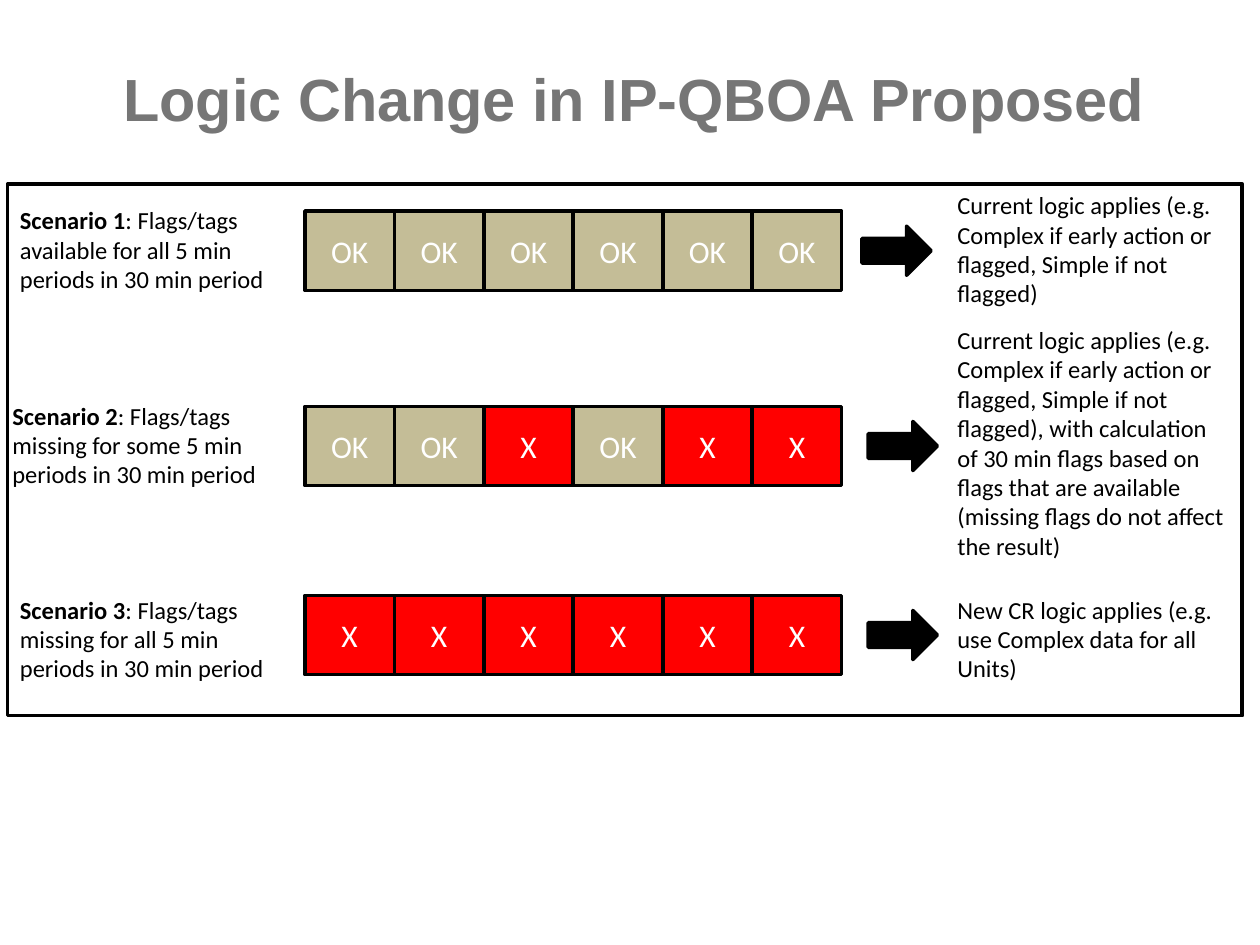
"""Build the slide comparing three flag-availability scenarios."""
from pptx import Presentation
from pptx.dml.color import RGBColor
from pptx.enum.shapes import MSO_SHAPE
from pptx.enum.text import MSO_ANCHOR, MSO_AUTO_SIZE, PP_ALIGN
from pptx.util import Inches, Pt

HEADING = "Logic Change in IP-QBOA Proposed"
SCENARIOS = [
    {"name": "Scenario 1",
     "condition": ": Flags/tags available for all 5 min periods in 30 min period",
     "flags": ["OK"] * 6,
     "outcome": "Current logic applies (e.g. Complex if early action or flagged, "
                "Simple if not flagged)",
     "outcome_lines": 4, "middle": 1.99, "text_middle": 1.99,
     "label_left": 0.06, "arrow_left": 6.84},
    {"name": "Scenario 2",
     "condition": ": Flags/tags missing for some 5 min periods in 30 min period",
     "flags": ["OK", "OK", "X", "OK", "X", "X"],
     "outcome": "Current logic applies (e.g. Complex if early action or flagged, "
                "Simple if not flagged), with calculation of 30 min flags based on "
                "flags that are available (missing flags do not affect the result)",
     "outcome_lines": 8, "middle": 3.54, "text_middle": 3.54,
     "label_left": 0, "arrow_left": 6.89},
    {"name": "Scenario 3",
     "condition": ": Flags/tags missing for all 5 min periods in 30 min period",
     "flags": ["X"] * 6,
     "outcome": "New CR logic applies (e.g. use Complex data for all Units)",
     "outcome_lines": 3, "middle": 5.04, "text_middle": 5.08,
     "label_left": 0.06, "arrow_left": 6.89},
]
COLORS = {"OK": "C4BD97", "X": "FF0000", "ink": "000000",
          "flag": "FFFFFF", "heading": "767676"}
FLAGS_LEFT, FLAG_PITCH, FLAG_WIDTH, FLAG_HEIGHT = 2.42, 0.71, 0.71, 0.63
ARROW_WIDTH, ARROW_HEIGHT = 0.55, 0.39
OUTCOME_LEFT, NOTE_WIDTH, LINE_HEIGHT, NOTE_PADDING = 7.5, 2.36, 0.24, 0.1
CONDITION_LINES = 3


def write(frame, *pieces, size=14, font="Calibri", color="ink",
          align=PP_ALIGN.LEFT, anchor=MSO_ANCHOR.TOP, wrap=True):
    """Fill a text frame with (text, bold) pieces."""
    frame.word_wrap = wrap
    frame.vertical_anchor = anchor
    paragraph = frame.paragraphs[0]
    paragraph.alignment = align
    for text, bold in pieces:
        run = paragraph.add_run()
        run.text = text
        run.font.name = font
        run.font.size = Pt(size)
        run.font.bold = bold
        run.font.color.rgb = RGBColor.from_string(COLORS[color])


def add_box(slide, preset, left, top, width, height, fill=None):
    """Add a black-outlined preset shape."""
    box = slide.shapes.add_shape(preset, Inches(left), Inches(top),
                                 Inches(width), Inches(height))
    box.shadow.inherit = False
    box.line.color.rgb = RGBColor.from_string(COLORS["ink"])
    box.line.width = Pt(2)
    if fill:
        box.fill.solid()
        box.fill.fore_color.rgb = RGBColor.from_string(COLORS[fill])
    else:
        box.fill.background()
    return box


def add_note(slide, left, middle, lines, *pieces):
    """Add a text box of a given line count, centred on a height."""
    height = NOTE_PADDING + lines * LINE_HEIGHT
    note = slide.shapes.add_textbox(Inches(left), Inches(middle - height / 2),
                                    Inches(NOTE_WIDTH), Inches(height))
    write(note.text_frame, *pieces)
    note.text_frame.auto_size = MSO_AUTO_SIZE.SHAPE_TO_FIT_TEXT


def add_scenario(slide, scenario):
    """Add one row: condition, flags, arrow and outcome."""
    middle = scenario["middle"]
    for column, flag in enumerate(scenario["flags"]):
        cell = add_box(slide, MSO_SHAPE.RECTANGLE, FLAGS_LEFT + column * FLAG_PITCH,
                       middle - FLAG_HEIGHT / 2, FLAG_WIDTH, FLAG_HEIGHT, flag)
        write(cell.text_frame, (flag, False), size=18, color="flag",
              align=PP_ALIGN.CENTER, anchor=MSO_ANCHOR.MIDDLE)
    add_note(slide, scenario["label_left"], scenario["text_middle"], CONDITION_LINES,
             (scenario["name"], True), (scenario["condition"], False))
    add_box(slide, MSO_SHAPE.RIGHT_ARROW, scenario["arrow_left"],
            middle - ARROW_HEIGHT / 2, ARROW_WIDTH, ARROW_HEIGHT, "ink")
    add_note(slide, OUTCOME_LEFT, scenario["text_middle"], scenario["outcome_lines"],
             (scenario["outcome"], False))


def main():
    """Lay out the slide and save it."""
    deck = Presentation()
    deck.slide_width, deck.slide_height = Inches(10), Inches(7.5)
    slide = deck.slides.add_slide(deck.slide_layouts[5])
    heading = slide.shapes.title
    heading.left, heading.top = Inches(0.88), Inches(0.44)
    heading.width, heading.height = Inches(8.4), Inches(0.67)
    write(heading.text_frame, (HEADING, True), size=34, font="Arial",
          color="heading", wrap=False)
    heading.text_frame.auto_size = MSO_AUTO_SIZE.SHAPE_TO_FIT_TEXT
    add_box(slide, MSO_SHAPE.RECTANGLE, 0.06, 1.46, 9.8, 4.22)
    for scenario in SCENARIOS:
        add_scenario(slide, scenario)
    deck.save("out.pptx")


if __name__ == "__main__":
    main()
